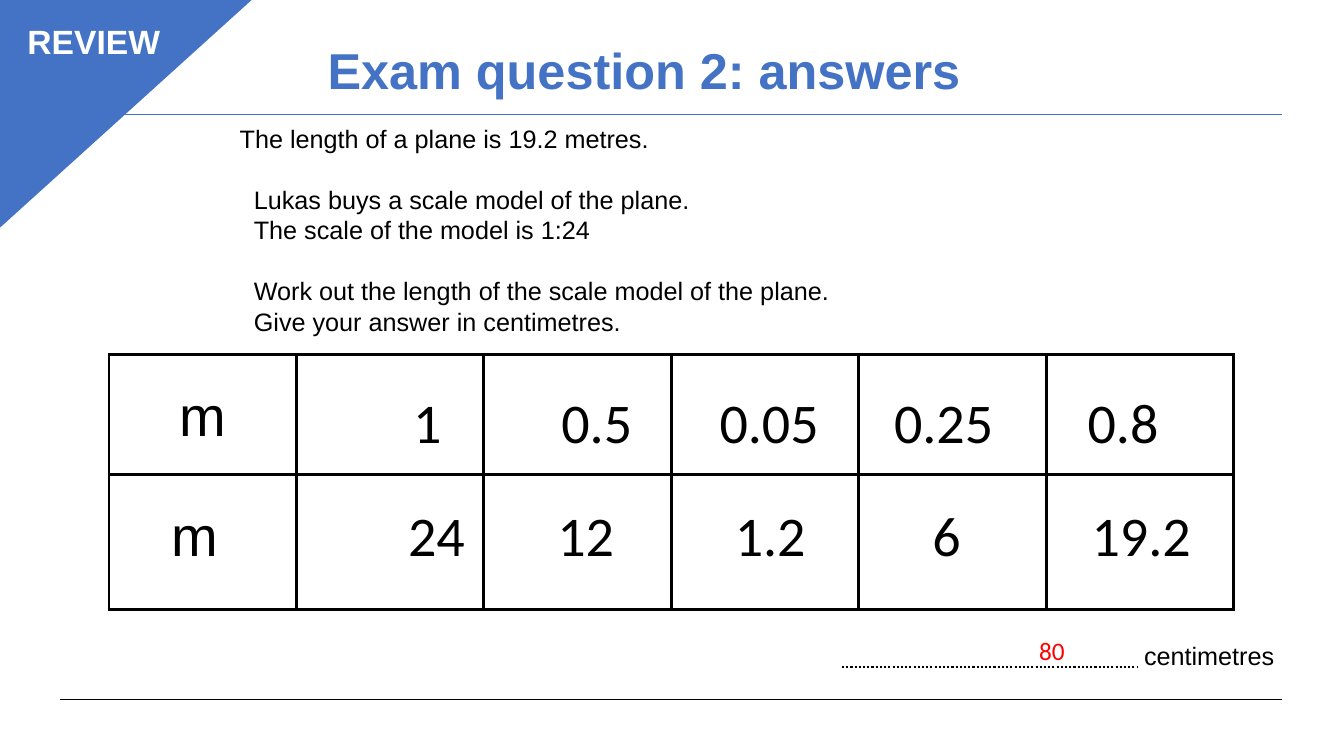
from lxml import etree
from pptx import Presentation
from pptx import util as u
from pptx.dml.color import RGBColor
from pptx.enum import dml, shapes, text
from pptx.oxml.ns import qn

W, H = u.Inches(13.33), u.Inches(7.5)
BLUE, BLACK, WHITE, RED = "4472C4", "000000", "FFFFFF", "FF0000"
LINE_PITCH = u.Pt(21.8)

# Left and width in percent of the slide's width
TOP_ROW = [("1", 30, 8.25), ("0.5", 41.03, 8.03), ("0.05", 52.8, 9.9),
           ("0.25", 65.78, 9.75), ("0.8", 80.18, 9.75)]
BOTTOM_ROW = [("24", 29.63, 7.13), ("12", 40.73, 8.78), ("1.2", 53.93, 8.03),
              ("6", 68.63, 8.03), ("19.2", 80.48, 9.98)]

# Text, and whether a gap precedes it
QUESTION = [("The length of a plane is 19.2 metres.", False),
            ("Lukas buys a scale model of the plane.", True),
            ("The scale of the model is 1:24", False),
            ("Work out the length of the scale model of the plane.", True),
            ("Give your answer in centimetres.", False)]


def rgb(value):
    return RGBColor.from_string(value)


def px(share):
    return int(W * share / 100)


def py(share):
    return int(H * share / 100)


def box(x, y, w, h):
    return px(x), py(y), px(w), py(h)


def style(p, size, font, color, bold=False, align=text.PP_ALIGN.LEFT):
    p.alignment = align
    for r in p.runs:
        r.font.size, r.font.name, r.font.bold = u.Pt(size), font, bold
        r.font.color.rgb = rgb(color)


def add_text(s, words, place, size, font="Calibri", color=BLACK, **look):
    tf = s.shapes.add_textbox(*box(*place)).text_frame
    tf.word_wrap = True
    tf.text = words
    style(tf.paragraphs[0], size, font, color, **look)
    return tf


def add_line(s, x1, x2, y, color, width=0.75, dash=None):
    c = s.shapes.add_connector(shapes.MSO_CONNECTOR.STRAIGHT,
                               px(x1), py(y), px(x2), py(y))
    c.line.color.rgb, c.line.width = rgb(color), u.Pt(width)
    if dash:
        c.line.dash_style = dash
    etree.SubElement(c._element.spPr, qn("a:effectLst"))


def add_block(s, kind, place, width):
    sp = s.shapes.add_shape(kind, *box(*place))
    sp.shadow.inherit = False
    sp.fill.solid()
    sp.fill.fore_color.rgb = sp.line.color.rgb = rgb(BLUE)
    sp.line.width = u.Pt(width)
    return sp


def set_borders(cell, width):
    tc_pr = cell._tc.get_or_add_tcPr()
    for i, side in enumerate(("lnL", "lnR", "lnT", "lnB")):
        ln = etree.Element(qn("a:" + side), w=str(u.Pt(width)))
        fill = etree.SubElement(ln, qn("a:solidFill"))
        etree.SubElement(fill, qn("a:srgbClr"), val=BLACK)
        tc_pr.insert(i, ln)


def add_ratio_table(s, labels, row_heights):
    place = box(8.1, 46.93, 83.7, sum(row_heights))
    table = s.shapes.add_table(len(labels), 6, *place).table
    table.first_row = table.horz_banding = False
    for row, height, label in zip(table.rows, row_heights, labels):
        row.height = py(height)
        for cell in row.cells:
            cell.fill.background()
            set_borders(cell, 2.25)
            cell.margin_left = cell.margin_right = u.Inches(0.07)
            cell.margin_top = cell.margin_bottom = 0
        p = row.cells[0].text_frame.paragraphs[0]
        p.text = label
        p.line_spacing, p.space_after = 1.5, u.Pt(8)
        style(p, 40, "Arial", BLACK, align=text.PP_ALIGN.CENTER)


def add_question(s, lines, place):
    tf = add_text(s, "\n".join(words for words, _ in lines), place, 18, "Arial")
    for i, (p, (_, gap)) in enumerate(zip(tf.paragraphs, lines)):
        style(p, 18, "Arial", BLACK)
        p.line_spacing = LINE_PITCH
        p.space_before = LINE_PITCH if gap else u.Pt(0)
        p._p.get_or_add_pPr().set("marL", str(u.Inches(0.42 if i else 0.28)))


def main():
    prs = Presentation()
    prs.slide_width, prs.slide_height = W, H
    s = prs.slides.add_slide(prs.slide_layouts[6])

    # Rules above and below the content
    add_line(s, 4.43, 95.4, 92.53, BLACK)
    add_line(s, 4.43, 95.4, 15.2, BLUE)

    # Ratio table and the numbers laid over it
    add_ratio_table(s, ("m", "m "), (15.87, 17.87))
    for numbers, y in ((TOP_ROW, 50.6), (BOTTOM_ROW, 65.6)):
        for number, x, w in numbers:
            add_text(s, number, (x, y, w, 10.27), 40)

    # Corner flag
    corner = add_block(s, shapes.MSO_SHAPE.ISOSCELES_TRIANGLE,
                       (0, -0.27, 18.82, 30.27), 1)
    corner.adjustments[0] = 0
    corner._element.spPr.xfrm.set("flipV", "1")
    flag = add_block(s, shapes.MSO_SHAPE.RECTANGLE, (1.2, 2.13, 11.55, 6.67), 0.75)
    flag.text_frame.text = "REVIEW"
    style(flag.text_frame.paragraphs[0], 24, "Arial", WHITE, True,
          text.PP_ALIGN.CENTER)

    # Title
    title = add_text(s, "Exam question 2: answers", (10.43, 2.27, 75, 14.8), 36,
                     "Arial", BLUE, bold=True, align=text.PP_ALIGN.CENTER)
    title.vertical_anchor = text.MSO_ANCHOR.MIDDLE
    title.paragraphs[0].line_spacing = 0.9

    # Question and answer line
    add_question(s, QUESTION, (15, 15.6, 57.9, 29.6))
    add_line(s, 62.65, 84.67, 88.23, BLACK, 1.5, dml.MSO_LINE.ROUND_DOT)
    add_text(s, "80", (76.57, 83.33, 3.83, 5.33), 18, color=RED)
    add_text(s, "centimetres", (84.38, 84.1, 12.07, 5.33), 18, "Arial")

    prs.save("out.pptx")


if __name__ == "__main__":
    main()
